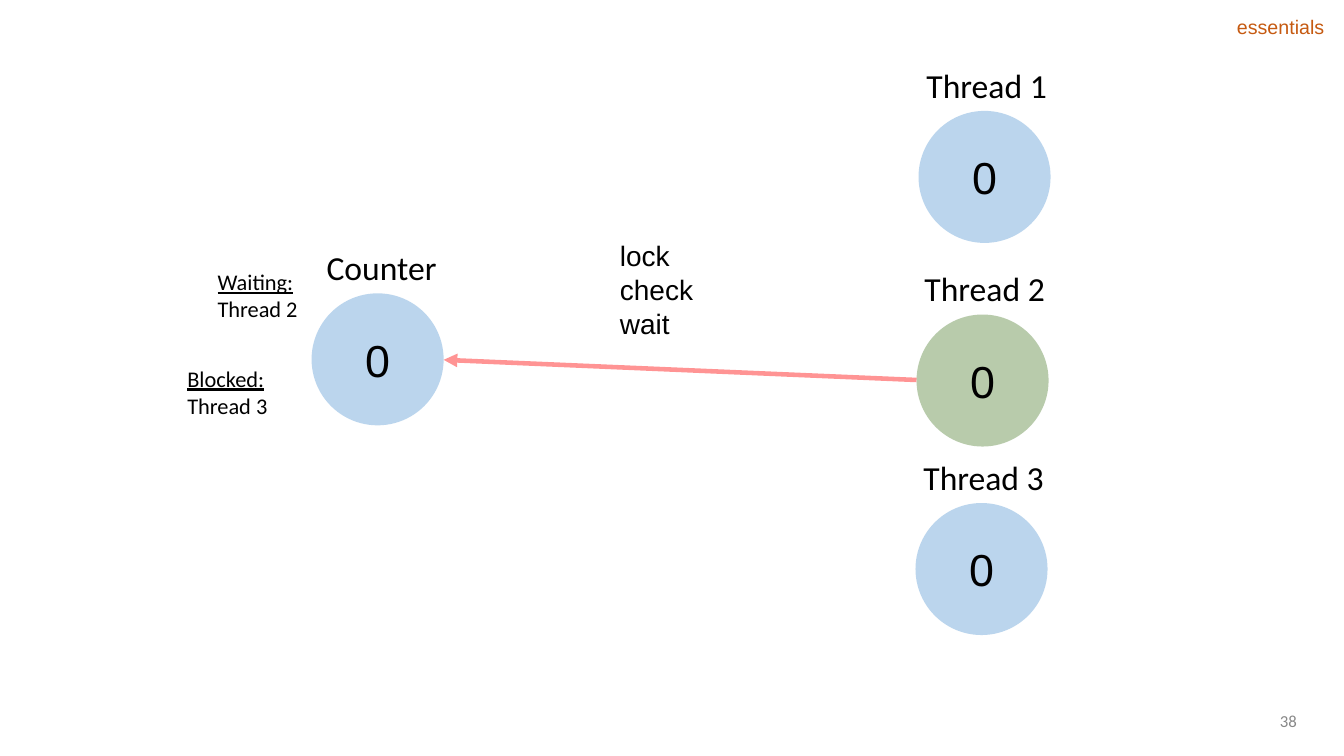
from lxml import etree
from pptx import Presentation
from pptx.dml.color import RGBColor
from pptx.enum.shapes import MSO_CONNECTOR, MSO_SHAPE
from pptx.enum.text import MSO_ANCHOR, MSO_AUTO_SIZE, PP_ALIGN
from pptx.oxml.ns import qn
from pptx.util import Inches, Pt

OVAL = MSO_SHAPE.OVAL
STRAIGHT = MSO_CONNECTOR.STRAIGHT
MIDDLE = MSO_ANCHOR.MIDDLE
CENTER, RIGHT = PP_ALIGN.CENTER, PP_ALIGN.RIGHT
FIT_SHAPE = MSO_AUTO_SIZE.SHAPE_TO_FIT_TEXT
BLUE, GREEN, RED = "5B9BD5", "548135", "FF0000"
DIAMETER = 1.31


def paint(sp, fill, color, alpha):
    fill.solid()
    fill.fore_color.rgb = RGBColor.from_string(color)
    for clr in sp._element.spPr.iter(qn("a:srgbClr")):
        etree.SubElement(clr, qn("a:alpha"), val=str(alpha * 1000))


def write(sp, text, size, font, color="000000", align=None):
    tf = sp.text_frame
    tf.word_wrap = True
    tf.text = text
    for p in tf.paragraphs:
        p.alignment = align
        for r in p.runs:
            r.font.size = Pt(size)
            r.font.name = font
            r.font.color.rgb = RGBColor.from_string(color)
    return tf


prs = Presentation()
prs.slide_width, prs.slide_height = Inches(13.33), Inches(7.5)
s = prs.slides.add_slide(prs.slide_layouts[6])

nodes = [
    ("Counter", 3.09, 2.91, BLUE, 0.05),
    ("Thread 1", 9.11, 1.1, BLUE, -0.02),
    ("Thread 2", 9.09, 3.12, GREEN, -0.02),
    ("Thread 3", 9.08, 4.99, BLUE, -0.02),
]
for name, x, y, color, shift in nodes:
    sp = s.shapes.add_shape(OVAL, Inches(x), Inches(y), Inches(DIAMETER), Inches(DIAMETER))
    sp.shadow.inherit = False
    sp.line.fill.background()
    paint(sp, sp.fill, color, 41)
    write(sp, "0", 32, "Arial", align=CENTER).vertical_anchor = MIDDLE
    label = s.shapes.add_textbox(Inches(x + shift), Inches(y - 0.51), Inches(1.41), Inches(0.5))
    write(label, name, 24, "Calibri")

arrow = s.shapes.add_connector(STRAIGHT, Inches(9.09), Inches(3.77), Inches(4.4), Inches(3.57))
arrow.line.width = Pt(3.25)
paint(arrow, arrow.line.fill, RED, 42)
ln = arrow._element.spPr.find(qn("a:ln"))
etree.SubElement(ln, qn("a:tailEnd"), type="triangle")
etree.SubElement(arrow._element.spPr, qn("a:effectLst"))

steps = s.shapes.add_textbox(Inches(6.05), Inches(2.32), Inches(0.93), Inches(1.11))
write(steps, "lock\ncheck\nwait", 20, "Arial")

queues = [("Waiting:", "Thread 2", 2.06, 2.61), ("Blocked:", "Thread 3", 1.76, 3.57)]
for heading, thread, x, y in queues:
    queue = s.shapes.add_textbox(Inches(x), Inches(y), Inches(1.31), Inches(0.64))
    tf = write(queue, f"{heading}\n{thread}", 16, "Calibri")
    tf.paragraphs[0].runs[0].font.underline = True

tag = s.shapes.add_textbox(Inches(12.17), Inches(0.1), Inches(1.07), Inches(0.34))
tf = write(tag, "essentials", 14, "Arial", "C65A11")
tf.word_wrap = False
tf.auto_size = FIT_SHAPE

number = s.shapes.add_textbox(Inches(9.42), Inches(6.95), Inches(3.54), Inches(0.4))
write(number, "38", 12, "Calibri", "888888", RIGHT).vertical_anchor = MIDDLE

prs.save("out.pptx")
